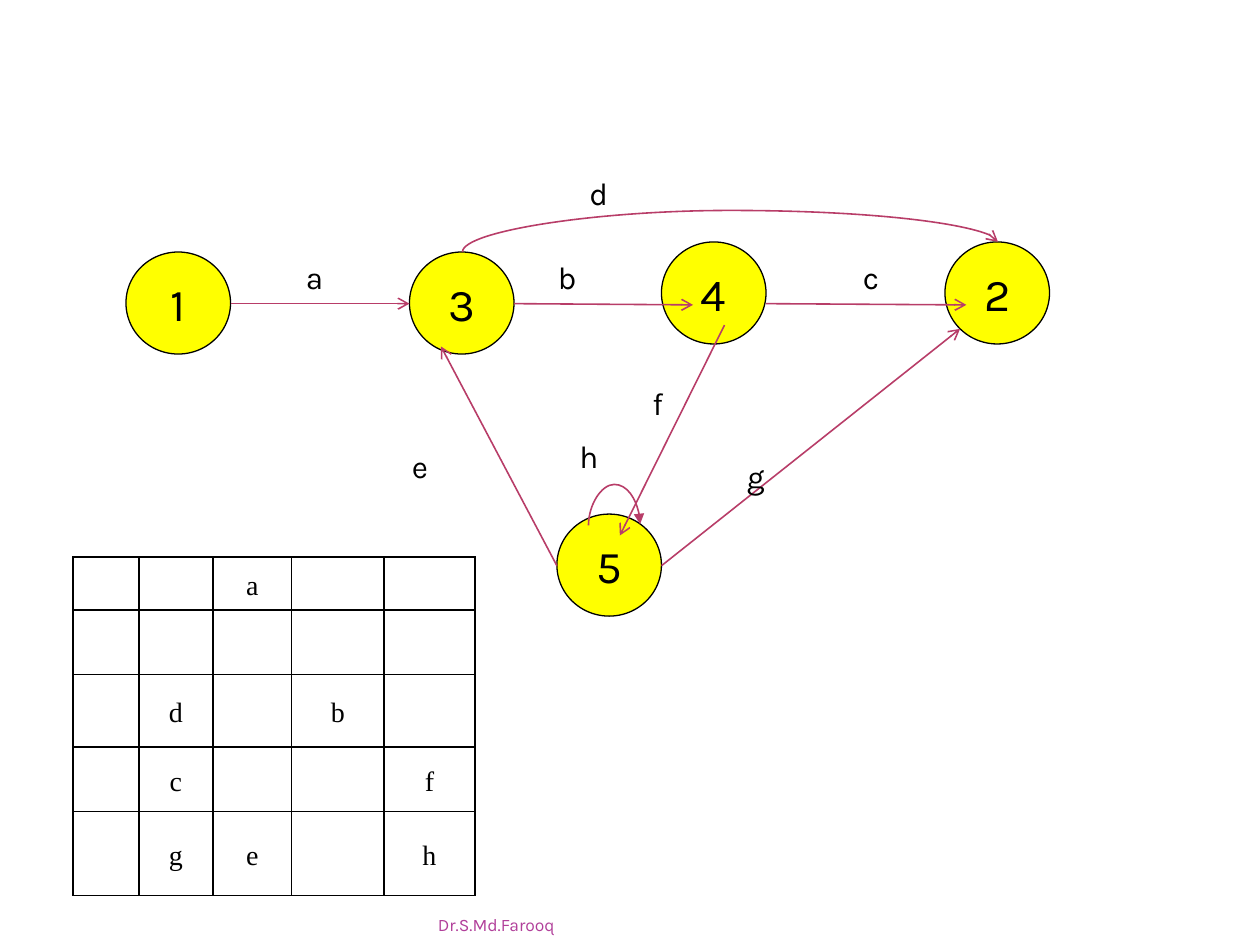
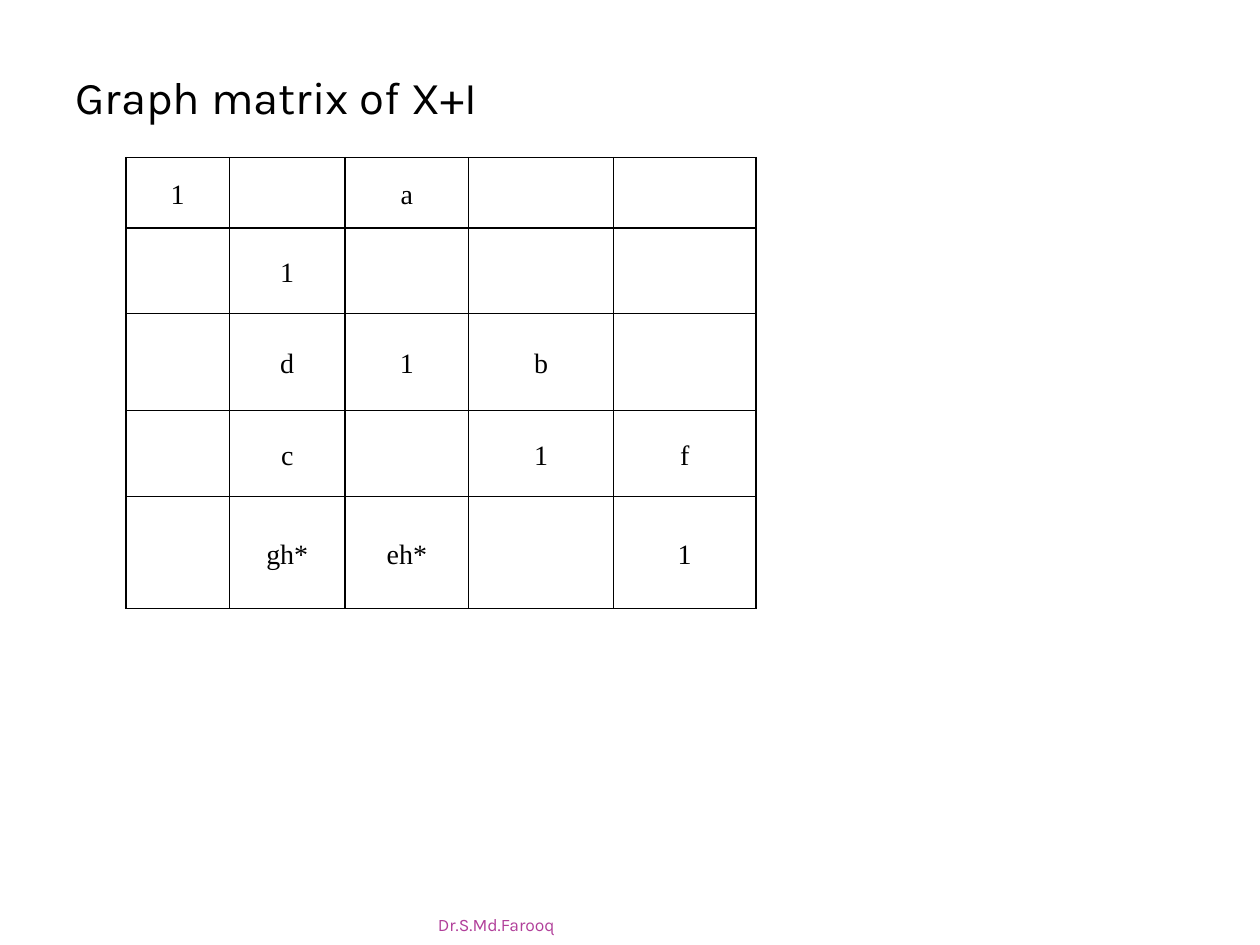
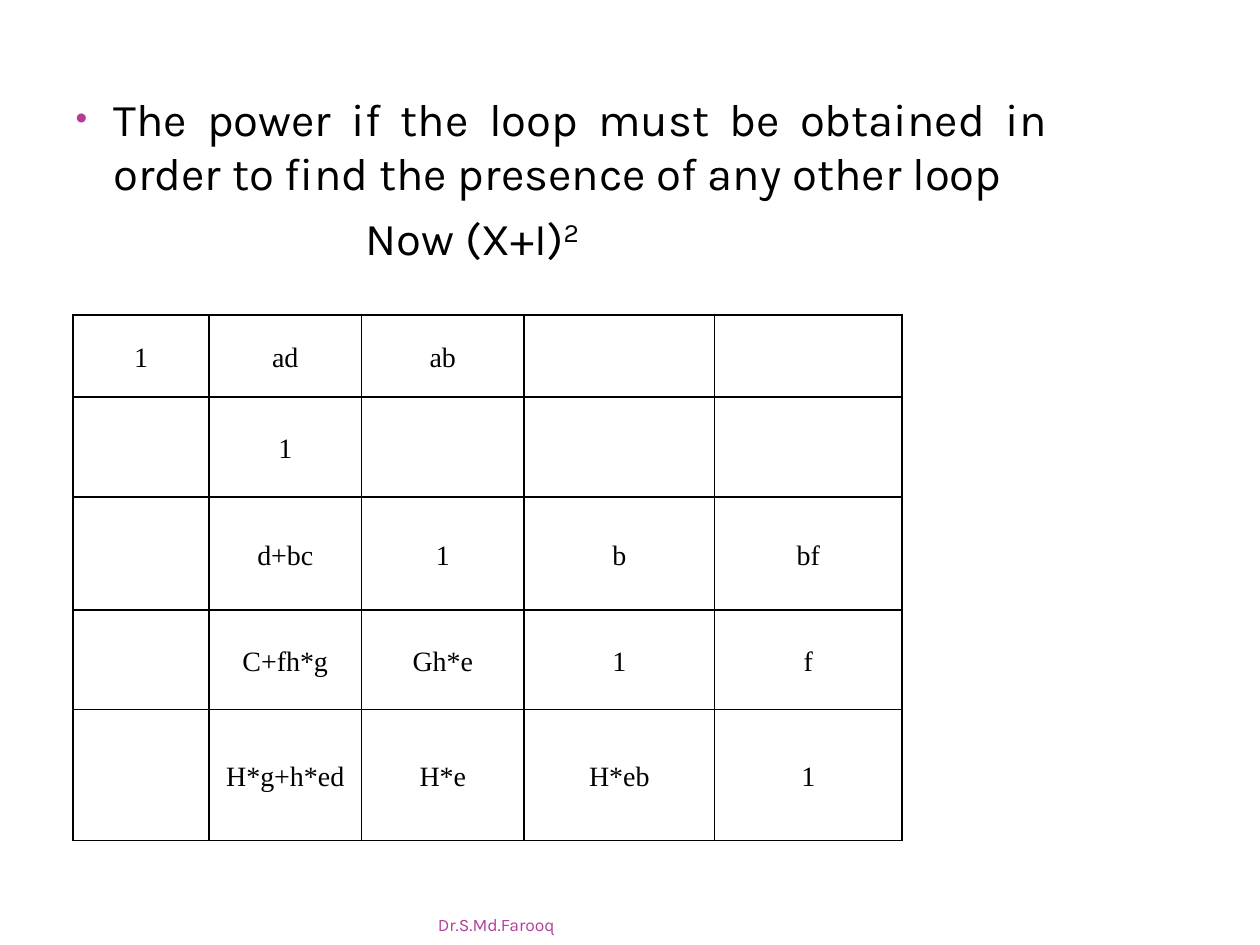
from lxml import etree
from pptx import Presentation
from pptx.dml.color import RGBColor
from pptx.enum.shapes import MSO_CONNECTOR, MSO_SHAPE
from pptx.enum.text import MSO_ANCHOR, MSO_AUTO_SIZE, PP_ALIGN
from pptx.oxml.ns import qn
from pptx.util import Inches, Pt

LINE, CURVE = MSO_CONNECTOR.STRAIGHT, MSO_CONNECTOR.CURVE
OVAL = MSO_SHAPE.OVAL
MIDDLE, BOTTOM = MSO_ANCHOR.MIDDLE, MSO_ANCHOR.BOTTOM
CENTER, RIGHT, JUSTIFY = PP_ALIGN.CENTER, PP_ALIGN.RIGHT, PP_ALIGN.JUSTIFY
GROW, FIXED = MSO_AUTO_SIZE.SHAPE_TO_FIT_TEXT, MSO_AUTO_SIZE.NONE

SANS, SERIF = "Karla", "Times New Roman"
BLACK, YELLOW, ROSE, PLUM = "000000", "FFFF00", "B83D68", "B13F9A"
FOOTER = "Dr.S.Md.Farooq"
BODY, BLANK = 1, 6  # layout numbers

# Shared proportions of the matrix columns and rows
COLS = [0.82, 0.92, 0.98, 1.15, 1.13]
ROWS = [0.56, 0.68, 0.77, 0.68, 0.89]

# Graph: node places, straight edges and edge labels
NODE = (0.83, 0.81)
NODES = {"1": (1, 2), "5": (4.42, 4.08), "3": (3.25, 2),
         "4": (5.25, 1.92), "2": (7.5, 1.92)}
EDGES = [((1.83, 2.41), (3.25, 2.41)), ((4.08, 2.41), (5.5, 2.42)),
         ((6.08, 2.41), (7.67, 2.42)), ((4.42, 4.49), (3.5, 2.75)),
         ((5.75, 2.58), (4.92, 4.25)), ((5.25, 4.49), (7.62, 2.61))]
LABELS = {"a": (2.33, 2), "b": (4.33, 2), "c": (6.75, 2), "d": (4.58, 1.33),
          "e": (3.17, 3.5), "g": (5.83, 3.58), "f": (5.08, 3), "h": (4.5, 3.42)}

GRAPH = [["", "", "a", "", ""],
         ["", "", "", "", ""],
         ["", "d", "", "b", ""],
         ["", "c", "", "", "f"],
         ["", "g", "e", "", "h"]]
UNIT = [["1", "", "a", "", ""],
        ["", "1", "", "", ""],
        ["", "d", "1", "b", ""],
        ["", "c", "", "1", "f"],
        ["", "gh*", "eh*", "", "1"]]
SQUARE = [["1", "ad", "ab", "", ""],
          ["", "1", "", "", ""],
          ["", "d+bc", "1", "b", "bf"],
          ["", "C+fh*g", "Gh*e", "1", "f"],
          ["", "H*g+h*ed", "H*e", "H*eb", "1"]]


def color(code):
    return RGBColor.from_string(code)


def inches(box):
    return [Inches(v) for v in box]


def add(parent, tag, **attrs):
    return etree.SubElement(parent, qn(tag), attrs)


def style(para, size, font=SANS, tint=BLACK):
    for run in para.runs:
        run.font.size = Pt(size)
        run.font.name = font
        run.font.color.rgb = color(tint)


# Text
def label(slide, text, spot):
    box = slide.shapes.add_textbox(*inches((*spot, 0.34, 0.4)))
    frame = box.text_frame
    frame.word_wrap = False
    frame.auto_size = GROW
    frame.text = text
    style(frame.paragraphs[0], 18)


def footer(slide):
    frame = slide.shapes.add_textbox(*inches((0.5, 7.17, 4, 0.25))).text_frame
    frame.word_wrap = True
    frame.margin_top = frame.margin_bottom = 0
    frame.vertical_anchor = BOTTOM
    frame.text = FOOTER
    para = frame.paragraphs[0]
    para.alignment = RIGHT
    style(para, 10, tint=PLUM)


def body(slide, box, lines):
    """Fill the body placeholder; lines holds (text, left, indent, bullet)."""
    title = slide.shapes.title
    title.element.getparent().remove(title.element)
    holder = slide.placeholders[1]
    holder.left, holder.top, holder.width, holder.height = inches(box)
    frame = holder.text_frame
    frame.auto_size = FIXED
    frame.text = "\n".join(line[0] for line in lines)
    for i, (para, line) in enumerate(zip(frame.paragraphs, lines)):
        left, indent, bullet = line[1:]
        props = para._p.get_or_add_pPr()
        props.set("marL", str(Inches(left)))
        props.set("indent", str(Inches(indent)))
        if bullet:
            add(add(props, "a:buClr"), "a:srgbClr", val=PLUM)
            add(props, "a:buSzPct", val="73000")
            add(props, "a:buChar", char=bullet)
        else:
            add(props, "a:buNone")
        para.space_before = Pt(6 if i else 0)
        style(para, 26)
    return frame.paragraphs


# Matrix
def matrix(slide, box, data):
    table = slide.shapes.add_table(len(ROWS), len(COLS), *inches(box)).table
    table.first_row = table.horz_banding = False
    for col, part in zip(table.columns, COLS):
        col.width = Inches(box[2] * part / sum(COLS))
    for row, part in zip(table.rows, ROWS):
        row.height = Inches(box[3] * part / sum(ROWS))
    for r, texts in enumerate(data):
        for c, text in enumerate(texts):
            fill_cell(table.cell(r, c), text)


def fill_cell(cell, text):
    cell.margin_left = cell.margin_right = Inches(0.07)
    cell.margin_top = cell.margin_bottom = 0
    cell.vertical_anchor = MIDDLE
    props = cell._tc.get_or_add_tcPr()
    for side in "LRTB":
        line = add(props, f"a:ln{side}", w=str(Pt(1)))
        add(add(line, "a:solidFill"), "a:srgbClr", val=BLACK)
    cell.fill.background()
    cell.text = text
    para = cell.text_frame.paragraphs[0]
    para.alignment = CENTER
    para.line_spacing = 1.15
    para.space_after = Pt(10)
    style(para, 16, SERIF)


# Graph parts
def node(slide, text, spot):
    shape = slide.shapes.add_shape(OVAL, *inches(spot + NODE))
    shape.shadow.inherit = False
    shape.fill.solid()
    shape.fill.fore_color.rgb = color(YELLOW)
    shape.line.color.rgb = color(BLACK)
    shape.line.width = Pt(0.75)
    frame = shape.text_frame
    frame.word_wrap = False
    frame.vertical_anchor = MIDDLE
    frame.text = text
    para = frame.paragraphs[0]
    para.alignment = CENTER
    style(para, 26)
    return shape


def edge(slide, start, end, kind=LINE, head="arrow"):
    link = slide.shapes.add_connector(kind, *inches(start + end))
    link.line.color.rgb = color(ROSE)
    link.line.width = Pt(0.9)
    add(link.line._get_or_add_ln(), "a:tailEnd", type=head)
    add(link._element.spPr, "a:effectLst")
    return link


def arc(slide, start, end, rise, head="arrow", ends=None):
    """Curve that climbs by rise above start and drops to a higher end."""
    link = edge(slide, start, end, CURVE, head)
    if ends:
        link.begin_connect(ends[0], 0)
        link.end_connect(ends[1], 0)
    # A quarter turn swaps width and height about the centre
    (x1, y1), (x2, y2) = start, end
    wide, high = y1 - y2, x2 - x1
    link.left = Inches((x1 + x2 - wide) / 2)
    link.top = Inches((y1 + y2 - high) / 2)
    link.width, link.height = Inches(wide), Inches(high)
    frame = link._element.spPr.find(qn("a:xfrm"))
    for name, value in (("rot", "5400000"), ("flipH", "1"), ("flipV", "1")):
        frame.set(name, value)
    guides = link._element.spPr.find(qn("a:prstGeom")).find(qn("a:avLst"))
    add(guides, "a:gd", name="adj1", fmla=f"val {round(rise / wide * 100000)}")


# Slides
def graph_slide(deck):
    slide = deck.slides.add_slide(deck.slide_layouts[BLANK])
    nodes = {text: node(slide, text, spot) for text, spot in NODES.items()}
    for start, end in EDGES:
        edge(slide, start, end)
    arc(slide, (4.67, 4.17), (5.08, 4.16), 0.33, "triangle")
    arc(slide, (3.67, 2), (7.92, 1.92), 0.33, ends=(nodes["3"], nodes["2"]))
    for text, spot in LABELS.items():
        label(slide, text, spot)
    matrix(slide, (0.58, 4.42, 3.19, 2.69), GRAPH)
    footer(slide)


def unit_slide(deck):
    slide = deck.slides.add_slide(deck.slide_layouts[BODY])
    body(slide, (0.5, 0.5, 7.92, 6.56),
         [("Graph matrix of X+I", 0.3, -0.3, None)])
    matrix(slide, (1, 1.25, 5, 3.58), UNIT)
    footer(slide)


def square_slide(deck):
    slide = deck.slides.add_slide(deck.slide_layouts[BODY])
    paras = body(slide, (0.5, 0.67, 7.92, 6.39), [
        ("The power if the loop must be obtained in order to find "
         "the presence of any other loop", 0.3, -0.3, "•"),
        ("Now (X+I)", 2.3, 0, None)])
    for para in paras:
        para.alignment = JUSTIFY
    power = paras[1].add_run()
    power.text = "2"
    style(paras[1], 26)
    power.font._element.set("baseline", "30000")
    matrix(slide, (0.58, 2.5, 6.58, 4.17), SQUARE)
    footer(slide)


def main():
    deck = Presentation()
    deck.slide_width, deck.slide_height = Inches(10), Inches(7.5)
    graph_slide(deck)
    unit_slide(deck)
    square_slide(deck)
    deck.save("out.pptx")


if __name__ == "__main__":
    main()
